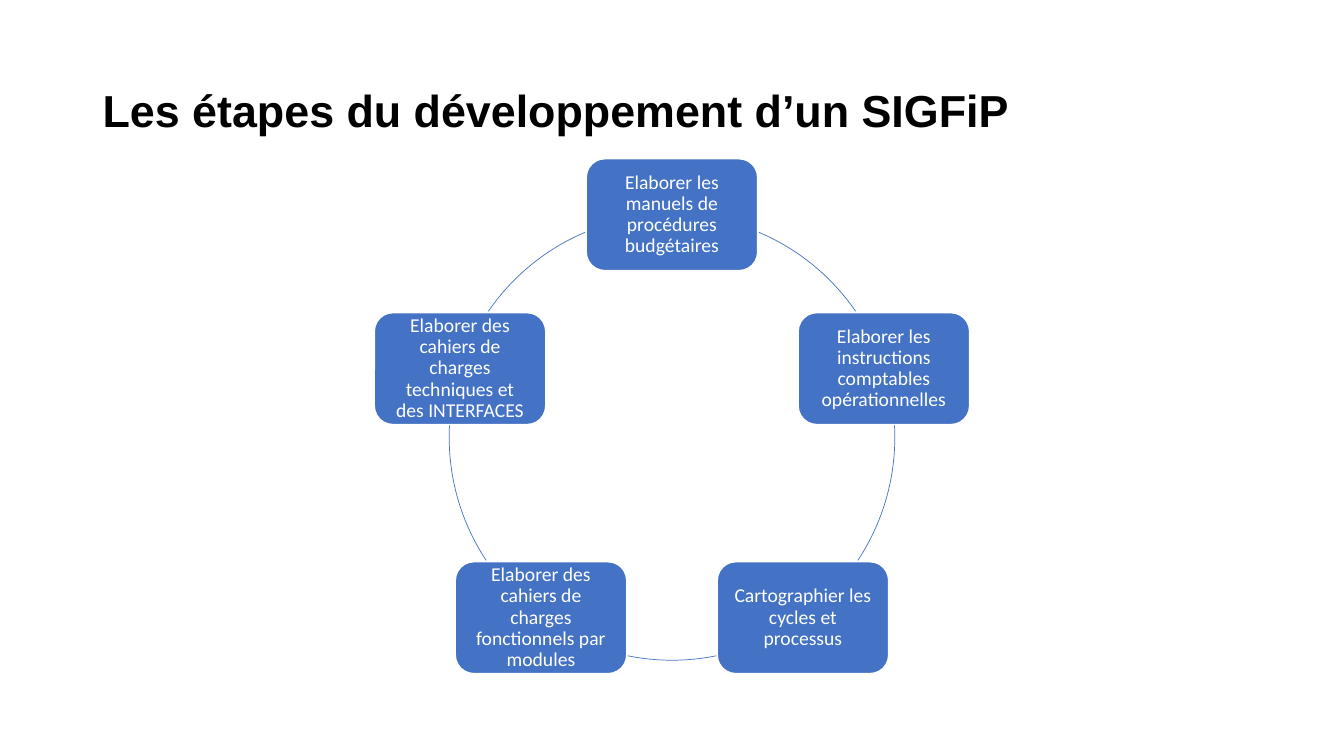
"""Build the slide showing the five-step cycle for developing a SIGFiP."""
from math import cos, radians, sin

from pptx import Presentation
from pptx.dml.color import RGBColor
from pptx.enum.shapes import MSO_SHAPE as SHAPE
from pptx.enum.text import MSO_ANCHOR as ANCHOR, PP_ALIGN as ALIGN
from pptx.util import Inches, Pt

TITLE = "Les étapes du développement d’un SIGFiP"
STEPS = [
    "Elaborer les manuels de procédures budgétaires",
    "Elaborer les instructions comptables opérationnelles",
    "Cartographier les cycles et processus",
    "Elaborer des cahiers de charges fonctionnels par modules",
    "Elaborer des cahiers de charges techniques et des INTERFACES",
]
ARCS = [(293, 325.5), (356.9, 33.5), (78.5, 101.5), (146.5, 183.1), (214.5, 247)]
COLORS = {"blue": "4472C4", "white": "FFFFFF", "black": "000000"}

WIDTH, HEIGHT = 13.33, 7.5
CENTER_X, CENTER_Y, RADIUS = WIDTH / 2, 4.34, 2.21
BOX_W, BOX_H = 1.7, 1.11


def color(name):
    return RGBColor.from_string(COLORS[name])


def write(shape, text, font, size, ink, align, bold=False):
    tf = shape.text_frame
    tf.word_wrap = True
    tf.vertical_anchor = ANCHOR.MIDDLE
    tf.text = text
    p = tf.paragraphs[0]
    p.alignment, p.line_spacing = align, 0.9
    r = p.runs[0]
    r.font.name, r.font.size, r.font.bold = font, Pt(size), bold
    r.font.color.rgb = color(ink)
    return tf


def add_shape(s, kind, x, y, w, h, line, weight):
    sp = s.shapes.add_shape(kind, Inches(x - w / 2), Inches(y - h / 2), Inches(w), Inches(h))
    sp.shadow.inherit = False
    sp.line.color.rgb = color(line)
    sp.line.width = Pt(weight)
    return sp


def add_step(s, text, angle):
    x = CENTER_X + RADIUS * cos(radians(angle))
    y = CENTER_Y + RADIUS * sin(radians(angle))
    sp = add_shape(s, SHAPE.ROUNDED_RECTANGLE, x, y, BOX_W, BOX_H, "white", 1)
    sp.fill.solid()
    sp.fill.fore_color.rgb = color("blue")
    tf = write(sp, text, "Calibri", 14, "white", ALIGN.CENTER)
    tf.margin_left = tf.margin_right = tf.margin_top = tf.margin_bottom = Inches(0.11)


def add_arc(s, start, end):
    sp = add_shape(s, SHAPE.ARC, CENTER_X, CENTER_Y, 2 * RADIUS, 2 * RADIUS, "blue", 0.5)
    sp.fill.background()
    for i, angle in enumerate((start, end)):
        sp.adjustments[i] = angle * 0.6


def main():
    prs = Presentation()
    prs.slide_width, prs.slide_height = Inches(WIDTH), Inches(HEIGHT)
    s = prs.slides.add_slide(prs.slide_layouts[6])
    title = s.shapes.add_textbox(Inches(0.92), Inches(0.4), Inches(11.5), Inches(1.45))
    write(title, TITLE, "Arial", 32, "black", ALIGN.JUSTIFY, True)
    for i, (text, arc) in enumerate(zip(STEPS, ARCS)):
        add_step(s, text, 360 / len(STEPS) * i - 90)
        add_arc(s, *arc)
    prs.save("out.pptx")


if __name__ == "__main__":
    main()
